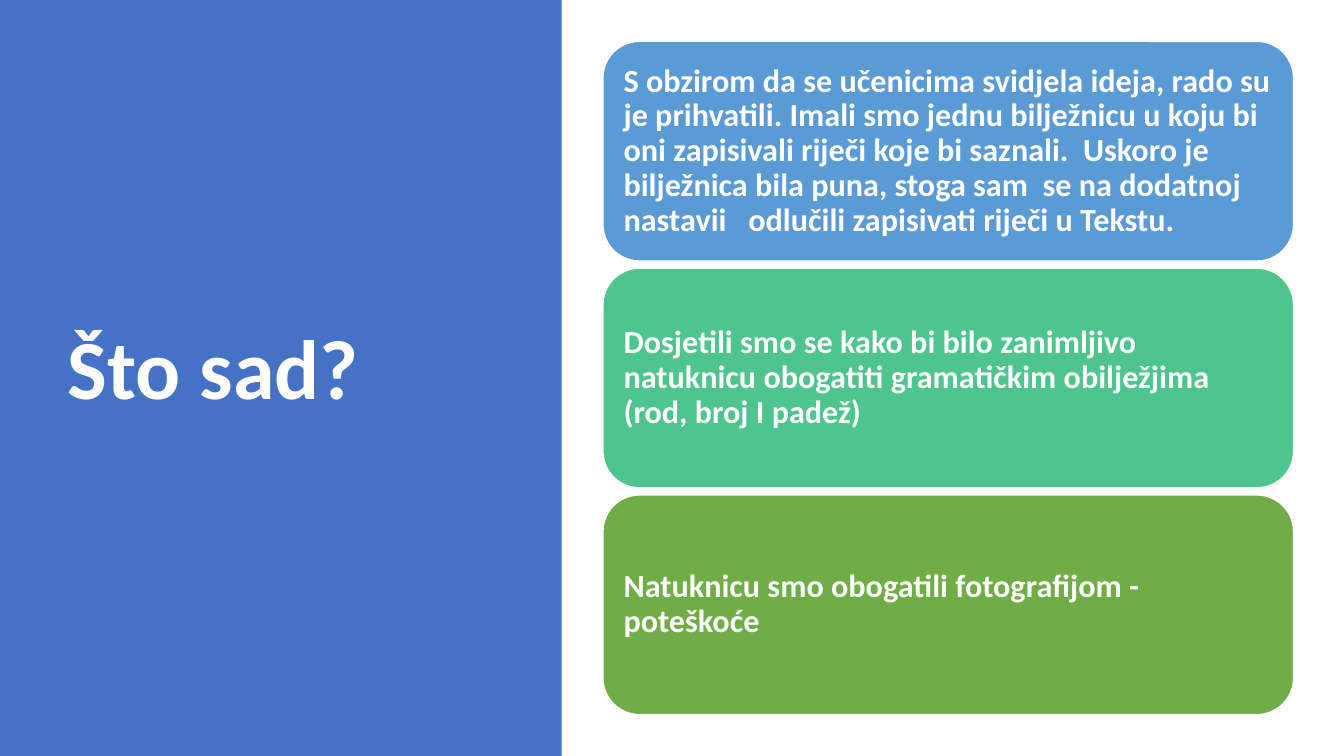
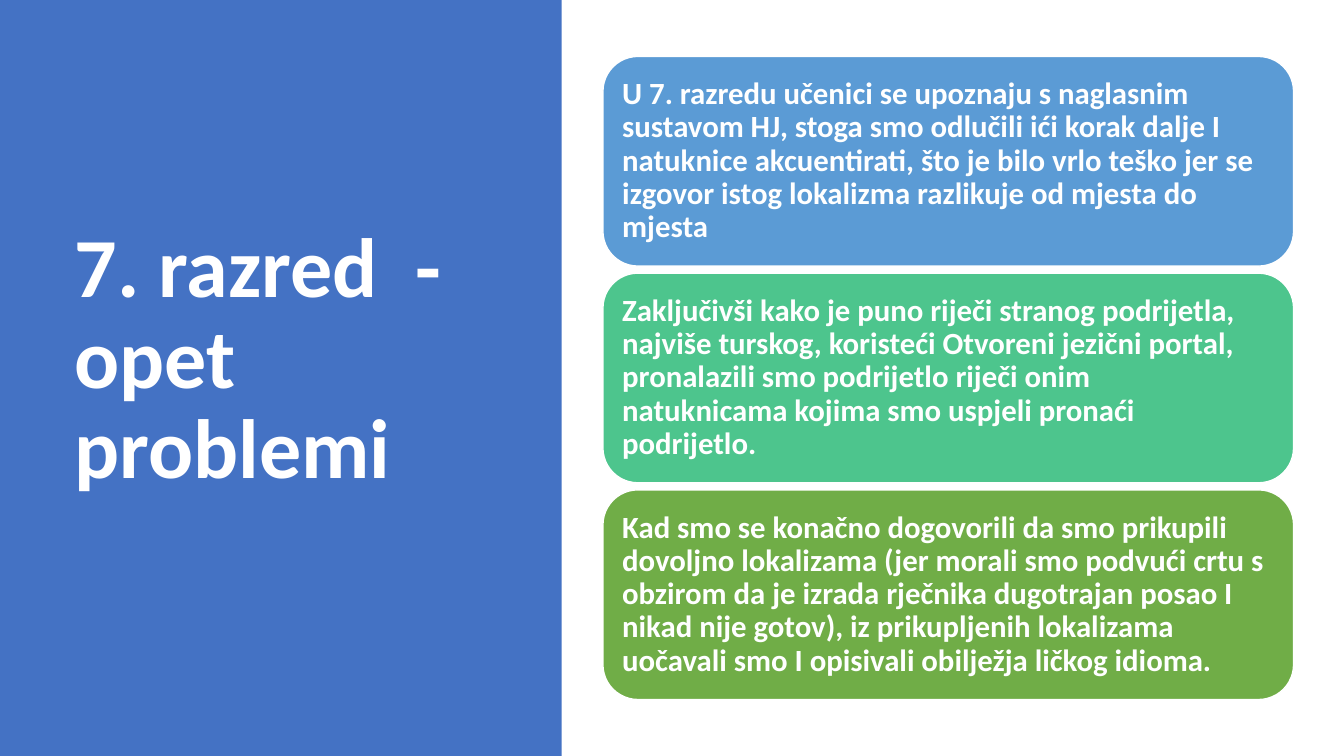
from dataclasses import dataclass

from pptx import Presentation, util as u
from pptx.dml.color import RGBColor
from pptx.enum import shapes, text
from pptx.presentation import Presentation as Deck
from pptx.slide import Slide
from pptx.text.text import TextFrame


@dataclass(frozen=True)
class Theme:
    font: str = "Calibri"
    title_size: int = 60
    panel: str = "4472C4"
    light: str = "FFFFFF"
    cards: tuple[str, ...] = ("5B9BD5", "4DC58D", "70AD47")


@dataclass(frozen=True)
class CardStack:
    top: float
    height: float
    inset: float
    text_size: int
    texts: tuple[str, ...]
    left: float = 5.98
    width: float = 6.85
    gap: float = 0.07


@dataclass(frozen=True)
class Page:
    title: str
    title_left: float
    title_top: float
    stack: CardStack


THEME = Theme()
SLIDE_WIDTH, SLIDE_HEIGHT = 13.33, 7.5
PANEL_WIDTH = 5.57
TITLE_WIDTH, TITLE_HEIGHT = 4.16, 6.02
TITLE_ONLY_LAYOUT = 5
HARD_SPACE_MARK, HARD_SPACE = "~", chr(160)

PAGES = (
    Page("Što sad?", 0.57, 0.68, CardStack(0.41, 2.18, 0.1, 23, (
        "S obzirom da se učenicima svidjela ideja, rado su je prihvatili. "
        "Imali smo jednu bilježnicu u koju bi oni zapisivali riječi koje bi "
        "saznali.~ Uskoro je bilježnica bila puna, stoga sam ~se~na dodatnoj "
        "nastavii~ ~odlučili~zapisivati riječi u Tekstu.",
        "Dosjetili smo se kako bi bilo zanimljivo natuknicu obogatiti "
        "gramatičkim obilježjima (rod, broj I padež)",
        "Natuknicu smo obogatili fotografijom - poteškoće",
    ))),
    Page("7. razred~ - opet problemi", 0.64, 0.57, CardStack(0.56, 2.08, 0.09, 22, (
        "U 7. razredu učenici se upoznaju s naglasnim sustavom HJ, stoga smo "
        "odlučili ići korak dalje I natuknice akcuentirati, što je bilo vrlo "
        "teško jer se izgovor istog lokalizma razlikuje od mjesta do mjesta",
        "Zaključivši kako je puno riječi stranog podrijetla, najviše turskog, "
        "koristeći Otvoreni jezični portal, pronalazili smo podrijetlo "
        "riječi~onim natuknicama~kojima smo uspjeli pronaći podrijetlo.",
        "Kad smo se konačno dogovorili da smo prikupili dovoljno lokalizama "
        "(jer morali smo podvući crtu s obzirom da je izrada rječnika "
        "dugotrajan posao I nikad nije gotov), iz prikupljenih lokalizama "
        "uočavali smo I opisivali obilježja ličkog idioma.",
    ))),
)


def write_text(frame: TextFrame, content: str, *, size: int, inset: float = 0.1,
               color: str = THEME.light, bold: bool = True) -> None:
    """Write one paragraph, turning each hard-space mark into a hard space."""
    frame.word_wrap = True
    frame.auto_size = text.MSO_AUTO_SIZE.NONE
    frame.vertical_anchor = text.MSO_ANCHOR.MIDDLE
    frame.margin_left = frame.margin_right = u.Inches(inset)
    frame.margin_top = frame.margin_bottom = u.Inches(inset)
    paragraph = frame.paragraphs[0]
    paragraph.alignment = text.PP_ALIGN.LEFT
    paragraph.line_spacing = 0.9
    run = paragraph.add_run()
    run.text = content.replace(HARD_SPACE_MARK, HARD_SPACE)
    run.font.name = THEME.font
    run.font.size = u.Pt(size)
    run.font.bold = bold
    run.font.color.rgb = RGBColor.from_string(color)


def add_block(slide: Slide, kind: shapes.MSO_SHAPE, left: float, top: float,
              width: float, height: float, fill: str, line: str | None = None):
    shape = slide.shapes.add_shape(
        kind, u.Inches(left), u.Inches(top), u.Inches(width), u.Inches(height))
    shape.shadow.inherit = False
    shape.fill.solid()
    shape.fill.fore_color.rgb = RGBColor.from_string(fill)
    if line:
        shape.line.color.rgb = RGBColor.from_string(line)
        shape.line.width = u.Pt(1)
    else:
        shape.line.fill.background()
    return shape


def add_title_panel(slide: Slide, page: Page) -> None:
    """Fill the title placeholder and lay the coloured panel behind it."""
    panel = add_block(slide, shapes.MSO_SHAPE.RECTANGLE, 0, 0,
                      PANEL_WIDTH, SLIDE_HEIGHT, THEME.panel)
    title = slide.shapes.title
    title._element.addprevious(panel._element)
    title.left, title.top = u.Inches(page.title_left), u.Inches(page.title_top)
    title.width, title.height = u.Inches(TITLE_WIDTH), u.Inches(TITLE_HEIGHT)
    write_text(title.text_frame, page.title, size=THEME.title_size)


def add_cards(slide: Slide, stack: CardStack) -> None:
    for index, (content, fill) in enumerate(zip(stack.texts, THEME.cards)):
        top = stack.top + index * (stack.height + stack.gap)
        card = add_block(slide, shapes.MSO_SHAPE.ROUNDED_RECTANGLE, stack.left, top,
                         stack.width, stack.height, fill, THEME.light)
        write_text(card.text_frame, content, size=stack.text_size, inset=stack.inset)


def add_page(presentation: Deck, page: Page) -> None:
    slide = presentation.slides.add_slide(presentation.slide_layouts[TITLE_ONLY_LAYOUT])
    add_title_panel(slide, page)
    add_cards(slide, page.stack)


def main() -> None:
    presentation = Presentation()
    presentation.slide_width = u.Inches(SLIDE_WIDTH)
    presentation.slide_height = u.Inches(SLIDE_HEIGHT)
    for page in PAGES:
        add_page(presentation, page)
    presentation.save("out.pptx")


if __name__ == "__main__":
    main()
